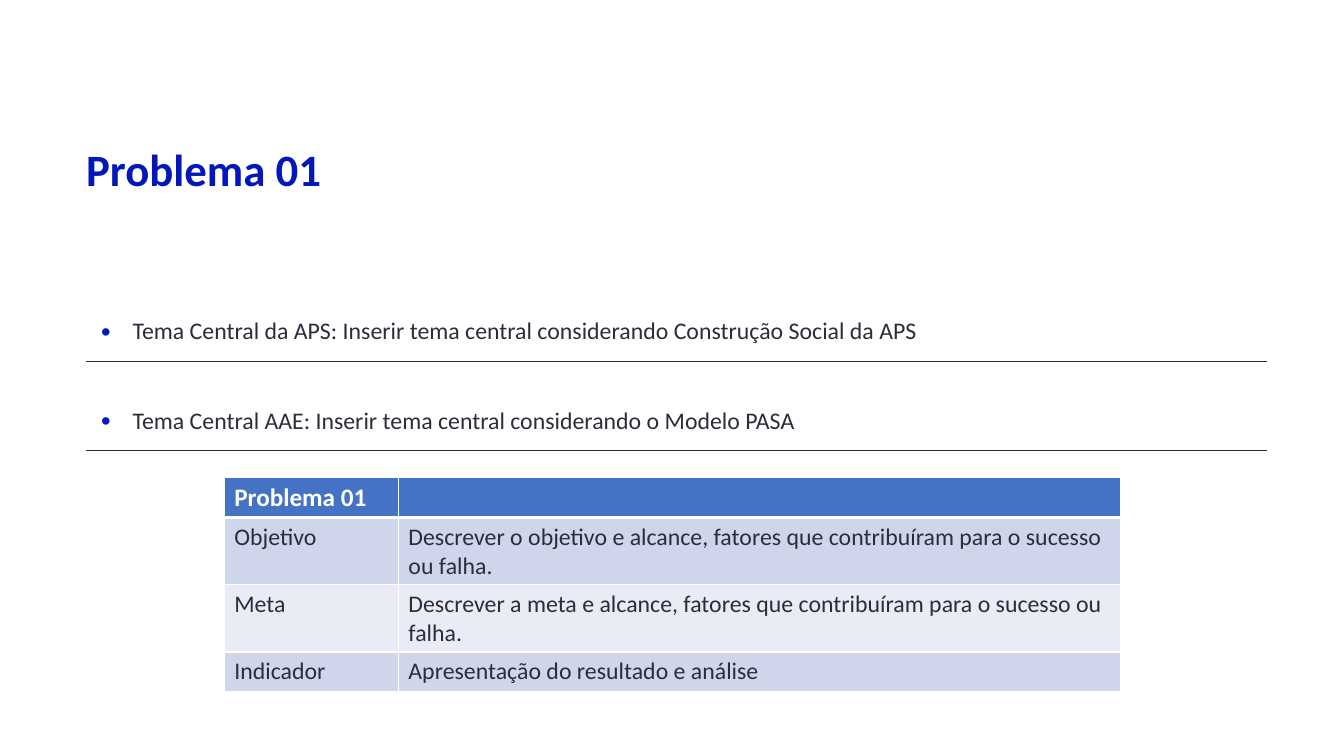
from lxml.etree import SubElement
from pptx import Presentation
from pptx.dml.color import RGBColor
from pptx.enum.text import MSO_ANCHOR, MSO_AUTO_SIZE, PP_ALIGN
from pptx.oxml.ns import qn
from pptx.util import Cm, Pt

COLORS = {
    "blue": "0317BB",
    "ink": "2A2E3A",
    "white": "FFFFFF",
    "header": "4472C4",
    "band_dark": "CFD5EA",
    "band_light": "E9EBF5",
}


def write_text(frame, text, size=17, color="ink", bold=False, font="Calibri",
               line_spacing=None, bullet_color=None):
    paragraph = frame.paragraphs[0]
    paragraph.alignment = PP_ALIGN.LEFT
    if line_spacing:
        paragraph.line_spacing = Pt(line_spacing)
    if bullet_color:
        properties = paragraph._p.get_or_add_pPr()
        indent = Cm(0.79)
        properties.set("marL", str(indent))
        properties.set("indent", str(-indent))
        bullet = SubElement(properties, qn("a:buClr"))
        SubElement(bullet, qn("a:srgbClr"), val=COLORS[bullet_color])
        SubElement(properties, qn("a:buSzPct"), val="115000")
        SubElement(properties, qn("a:buFont"), typeface="Arial")
        SubElement(properties, qn("a:buChar"), char="•")
    run = paragraph.add_run()
    run.text = text
    run.font.name = font
    run.font.size = Pt(size)
    run.font.bold = bold
    run.font.color.rgb = RGBColor.from_string(COLORS[color])


class SlideBuilder:
    def __init__(self, presentation):
        self.slide = presentation.slides.add_slide(presentation.slide_layouts[5])

    def title(self, text, left, top, width, height):
        shape = self.slide.shapes.title
        shape.left, shape.top, shape.width, shape.height = left, top, width, height
        frame = shape.text_frame
        frame.margin_left = frame.margin_right = 0
        frame.margin_top = frame.margin_bottom = 0
        frame.vertical_anchor = MSO_ANCHOR.TOP
        frame.word_wrap = True
        frame.auto_size = MSO_AUTO_SIZE.SHAPE_TO_FIT_TEXT
        write_text(frame, text, size=32, color="blue", bold=True, line_spacing=68)

    def table(self, left, top, column_widths, row_heights):
        frame = self.slide.shapes.add_table(
            len(row_heights), len(column_widths), left, top,
            sum(column_widths), sum(row_heights))
        table = frame.table
        table.horz_banding = False
        for column, width in zip(table.columns, column_widths):
            column.width = width
        for row, height in zip(table.rows, row_heights):
            row.height = height
        return table

    def borders(self, cell, color, **widths):
        properties = cell._tc.get_or_add_tcPr()
        for side in "LRTB":
            width = widths.get(side, 0)
            line = SubElement(properties, qn(f"a:ln{side}"), w=str(Pt(width)))
            if width:
                fill = SubElement(line, qn("a:solidFill"))
                SubElement(fill, qn("a:srgbClr"), val=COLORS[color])
            else:
                SubElement(line, qn("a:noFill"))

    def theme_list(self, themes, left, top, width, row_heights):
        table = self.table(left, top, [width], row_heights)
        table.first_row = False
        for index, theme in enumerate(themes):
            cell = table.cell(index, 0)
            cell.margin_left = cell.margin_right = Cm(0.38)
            cell.margin_top = cell.margin_bottom = Cm(0.38)
            cell.vertical_anchor = MSO_ANCHOR.BOTTOM
            self.borders(cell, "ink", T=0.75 if index else 0, B=0.75)
            cell.fill.background()
            write_text(cell.text_frame, theme, line_spacing=35, bullet_color="blue")

    def problem_table(self, rows, left, top, column_widths, row_height):
        table = self.table(left, top, column_widths, [row_height] * len(rows))
        for row_index, row in enumerate(rows):
            is_header = row_index == 0
            band = "band_dark" if row_index % 2 else "band_light"
            for column_index, text in enumerate(row):
                cell = table.cell(row_index, column_index)
                self.borders(cell, "white", L=1, R=1,
                             T=3 if row_index == 1 else 1, B=3 if is_header else 1)
                cell.fill.solid()
                cell.fill.fore_color.rgb = RGBColor.from_string(
                    COLORS["header" if is_header else band])
                if text:
                    write_text(cell.text_frame, text, size=18 if is_header else 17,
                               color="white" if is_header else "ink", bold=is_header)


def main():
    presentation = Presentation()
    presentation.slide_width = Cm(33.87)
    presentation.slide_height = Cm(19.05)
    builder = SlideBuilder(presentation)
    margin = Cm(2.17)
    builder.title("Problema 01", margin, Cm(2.52), Cm(21.13), Cm(2.11))
    builder.theme_list(
        ["Tema Central da APS: Inserir tema central considerando Construção Social da APS",
         "Tema Central AAE: Inserir tema central considerando o Modelo PASA"],
        margin, Cm(6.89), Cm(29.77), [Cm(2.21), Cm(2.26)])
    builder.problem_table(
        [("Problema 01", ""),
         ("Objetivo", "Descrever o objetivo e alcance, fatores que contribuíram para o sucesso ou falha."),
         ("Meta", "Descrever a meta e alcance, fatores que contribuíram para o sucesso ou falha."),
         ("Indicador", "Apresentação do resultado e análise")],
        Cm(5.65), Cm(12.02), [Cm(4.39), Cm(18.19)], Cm(0.99))
    presentation.save("out.pptx")


if __name__ == "__main__":
    main()
